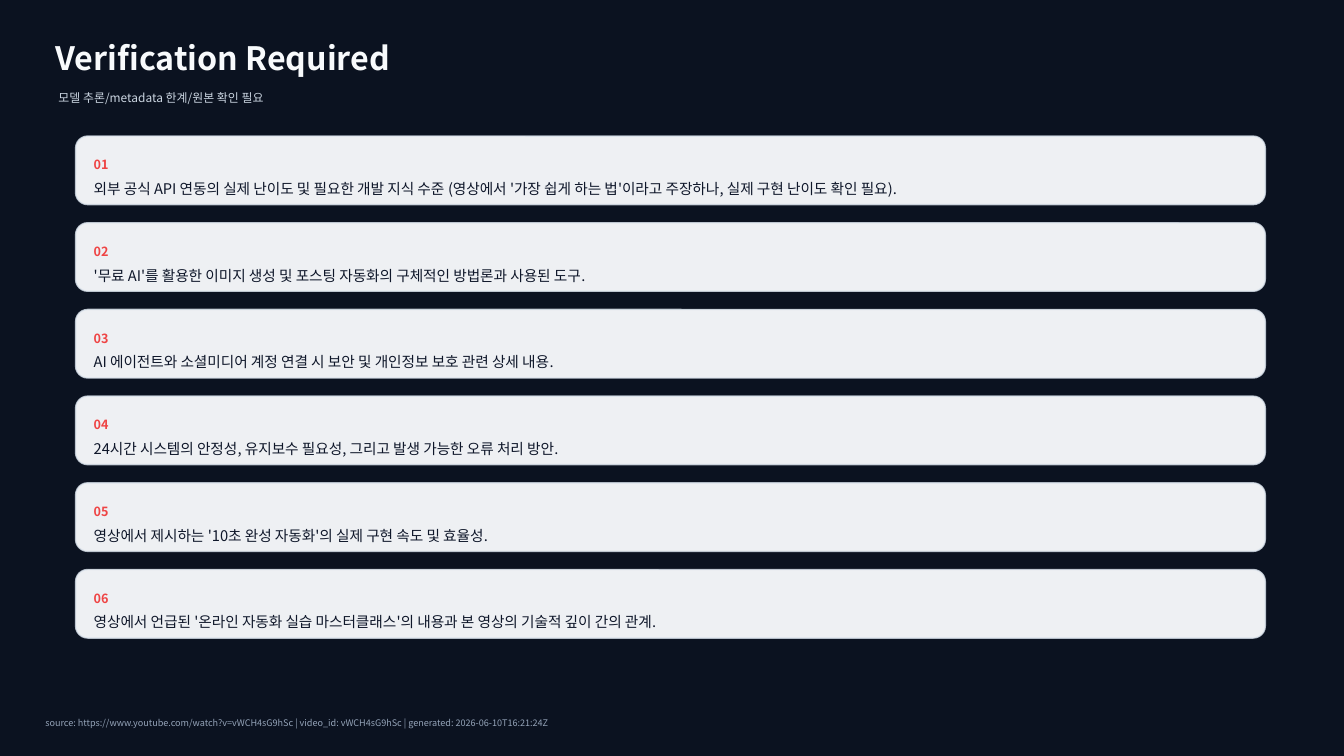
from pptx import Presentation
from pptx.dml.color import RGBColor
from pptx.enum.shapes import MSO_SHAPE
from pptx.enum.text import MSO_ANCHOR, MSO_AUTO_SIZE, PP_ALIGN
from pptx.oxml.ns import qn
from pptx.util import Inches, Pt
from lxml.etree import SubElement

FONT = "Noto Sans CJK KR"
NAVY = RGBColor(0x0B, 0x12, 0x20)
WHITE = RGBColor(0xF8, 0xFA, 0xFC)
SILVER = RGBColor(0xCB, 0xD5, 0xE1)
BORDER = RGBColor(0xD7, 0xE0, 0xEA)
RED = RGBColor(0xEF, 0x44, 0x44)
INK = RGBColor(0x0F, 0x17, 0x2A)
SLATE = RGBColor(0x94, 0xA3, 0xB8)

TITLE_STYLE = {"size": Pt(23), "bold": True}
SUBTITLE_STYLE = {"size": Pt(8.5), "bold": False}
NUMBER_STYLE = {"size": Pt(9), "bold": True}
ITEM_STYLE = {"size": Pt(10.5), "bold": False}
SOURCE_STYLE = {"size": Pt(6.5), "bold": False}

CHECKS = [
    "외부 공식 API 연동의 실제 난이도 및 필요한 개발 지식 수준 "
    "(영상에서 '가장 쉽게 하는 법'이라고 주장하나, 실제 구현 난이도 확인 필요).",
    "'무료 AI'를 활용한 이미지 생성 및 포스팅 자동화의 구체적인 방법론과 사용된 도구.",
    "AI 에이전트와 소셜미디어 계정 연결 시 보안 및 개인정보 보호 관련 상세 내용.",
    "24시간 시스템의 안정성, 유지보수 필요성, 그리고 발생 가능한 오류 처리 방안.",
    "영상에서 제시하는 '10초 완성 자동화'의 실제 구현 속도 및 효율성.",
    "영상에서 언급된 '온라인 자동화 실습 마스터클래스'의 내용과 본 영상의 기술적 깊이 간의 관계.",
]
SOURCE = ("source: https://www.youtube.com/watch?v=vWCH4sG9hSc | "
          "video_id: vWCH4sG9hSc | generated: 2026-06-10T16:21:24Z")

CARD_LEFT, CARD_TOP, CARD_WIDTH, CARD_HEIGHT = 0.75, 1.35, 11.8, 0.68
CARD_STEP = 0.86
CARD_PADDING = 0.18


def write_line(holder, text, style, color):
    """Fill a text holder with one left-aligned line."""
    frame = holder.text_frame
    frame_format = {
        "margin_left": 0, "margin_right": 0, "margin_top": 0, "margin_bottom": 0,
        "word_wrap": True, "auto_size": MSO_AUTO_SIZE.NONE,
        "vertical_anchor": MSO_ANCHOR.MIDDLE,
    }
    for name, value in frame_format.items():
        setattr(frame, name, value)
    line = frame.paragraphs[0]
    line.alignment = PP_ALIGN.LEFT
    line.space_before = Pt(0)
    run = line.add_run()
    run.text = text
    for name, value in {**style, "name": FONT}.items():
        setattr(run.font, name, value)
    run.font.color.rgb = color
    # Korean letters take the East Asian typeface
    SubElement(run.font._element, qn("a:ea"), typeface=FONT)


def place(holder, left, top, width, height):
    position = {"left": left, "top": top, "width": width, "height": height}
    for name, value in position.items():
        setattr(holder, name, Inches(value))


def add_label(slide, box, text, style, color):
    label = slide.shapes.add_textbox(*map(Inches, box))
    write_line(label, text, style, color)


def set_opacity(fill, percent):
    color = fill._xPr.find(qn("a:solidFill"))[0]
    SubElement(color, qn("a:alpha"), val=str(percent * 1000))


def add_check_card(slide, number, text):
    top = CARD_TOP + (number - 1) * CARD_STEP
    card = slide.shapes.add_shape(
        MSO_SHAPE.ROUNDED_RECTANGLE,
        *map(Inches, (CARD_LEFT, top, CARD_WIDTH, CARD_HEIGHT)))
    card.adjustments[0] = 0.176
    card.shadow.inherit = False
    card.fill.solid()
    card.fill.fore_color.rgb = WHITE
    set_opacity(card.fill, 96)
    card.line.color.rgb = BORDER
    card.line.width = Pt(1)
    set_opacity(card.line.fill, 80)

    left = CARD_LEFT + CARD_PADDING
    width = CARD_WIDTH - 2 * CARD_PADDING
    add_label(slide, (left, top + 0.16, width, 0.25), f"{number:02d}", NUMBER_STYLE, RED)
    add_label(slide, (left, top + 0.5, width, 0.04), text, ITEM_STYLE, INK)


def main():
    deck = Presentation()
    deck.slide_width, deck.slide_height = Inches(13.33), Inches(7.5)
    slide = deck.slides.add_slide(deck.slide_layouts[1])
    slide.background.fill.solid()
    slide.background.fill.fore_color.rgb = NAVY

    # Heading
    title, subtitle = slide.placeholders
    place(title, 0.55, 0.35, 12, 0.45)
    write_line(title, "Verification Required", TITLE_STYLE, WHITE)
    place(subtitle, 0.58, 0.83, 11.5, 0.28)
    subtitle_format = subtitle.text_frame.paragraphs[0]._p.get_or_add_pPr()
    for name in ("marL", "indent"):
        subtitle_format.set(name, "0")
    SubElement(subtitle_format, qn("a:buNone"))
    write_line(subtitle, "모델 추론/metadata 한계/원본 확인 필요", SUBTITLE_STYLE, SILVER)

    # Points to verify
    for number, text in enumerate(CHECKS, start=1):
        add_check_card(slide, number, text)

    # Source line
    add_label(slide, (0.45, 7.05, 12.4, 0.25), SOURCE, SOURCE_STYLE, SLATE)
    deck.save("out.pptx")


if __name__ == "__main__":
    main()
